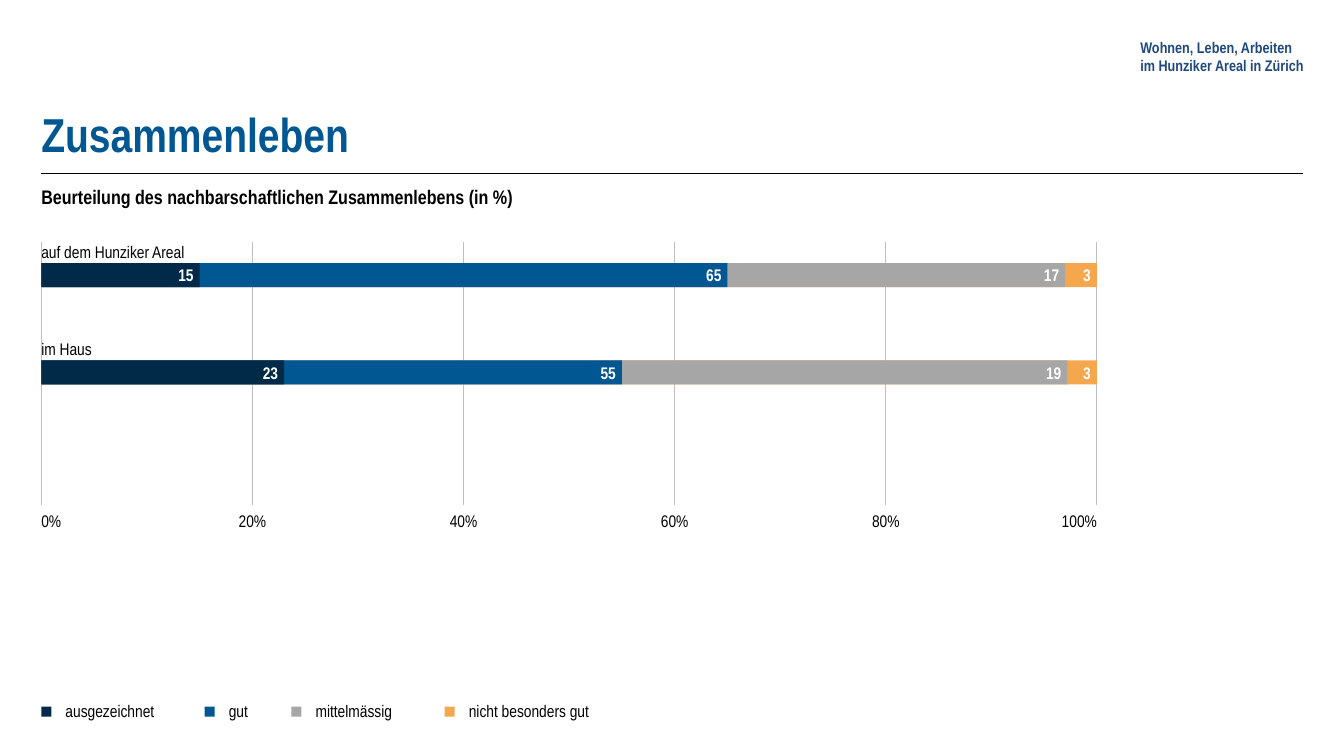
from lxml import etree
from pptx import Presentation, util as u
from pptx.dml.color import RGBColor
from pptx.enum import shapes, text
from pptx.oxml import ns

NAVY = RGBColor(0x00, 0x2A, 0x48)
BLUE = RGBColor(0x00, 0x57, 0x91)
GREY = RGBColor(0xA6, 0xA6, 0xA6)
ORANGE = RGBColor(0xF5, 0xA7, 0x4D)
HEADER_BLUE = RGBColor(0x1F, 0x49, 0x7D)
GRID_GREY = RGBColor(0xBF, 0xBF, 0xBF)
BLACK = RGBColor(0, 0, 0)
WHITE = RGBColor(0xFF, 0xFF, 0xFF)

FONT = "Arial Narrow"
HEADER = ["Wohnen, Leben, Arbeiten", "im Hunziker Areal in Zürich"]
TITLE = "Zusammenleben"
SUBTITLE = "Beurteilung des nachbarschaftlichen Zusammenlebens (in %)"
RATINGS = [
    ("ausgezeichnet", NAVY, 0),
    ("gut", BLUE, 1.62),
    ("mittelmässig", GREY, 2.48),
    ("nicht besonders gut", ORANGE, 4),
]
BARS = [
    ("auf dem Hunziker Areal", [15, 65, 17, 3], [15, 65, 97, 100]),
    ("im Haus", [23, 55, 19, 3], [23, 55, 97.2, 100]),
]
TICKS = range(0, 101, 20)

WIDTH, HEIGHT = 13.33, 7.5
LEFT = 0.41
CONTENT_WIDTH = WIDTH - 2 * LEFT
PLOT_WIDTH = 10.47
PLOT_TOP, PLOT_BOTTOM = 2.4, 5.01
ROW_HEIGHT, BAR_OFFSET, BAR_HEIGHT = 0.965, 0.21, 0.24
TICK_WIDTH = 0.47
LEGEND_TOP, MARKER = 6.95, 0.1

LEFT_ALIGN, CENTER, RIGHT = text.PP_ALIGN.LEFT, text.PP_ALIGN.CENTER, text.PP_ALIGN.RIGHT
TOP, MIDDLE, BOTTOM = text.MSO_ANCHOR.TOP, text.MSO_ANCHOR.MIDDLE, text.MSO_ANCHOR.BOTTOM

deck = Presentation()
deck.slide_width, deck.slide_height = u.Inches(WIDTH), u.Inches(HEIGHT)
page = deck.slides.add_slide(deck.slide_layouts[6])


def inches(*lengths):
    return [u.Inches(length) for length in lengths]


def write(shape, lines, size=12, color=BLACK, bold=False, align=LEFT_ALIGN,
          anchor=TOP, right_inset=0, before=0):
    frame = shape.text_frame
    frame.word_wrap = True
    frame.vertical_anchor = anchor
    frame.margin_left = frame.margin_top = frame.margin_bottom = 0
    frame.margin_right = u.Inches(right_inset)
    para = frame.paragraphs[0]
    para.alignment = align
    para.space_before = u.Pt(before)
    for index, line in enumerate(lines):
        if index:
            para.add_line_break()
        span = para.add_run()
        span.text = line
        span.font.name, span.font.size = FONT, u.Pt(size)
        span.font.bold, span.font.color.rgb = bold, color


def add_text(place, lines, **style):
    write(page.shapes.add_textbox(*inches(*place)), lines, **style)


def add_block(place, color):
    block = page.shapes.add_shape(shapes.MSO_SHAPE.RECTANGLE, *inches(*place))
    block.shadow.inherit = False
    block.fill.solid()
    block.fill.fore_color.rgb = color
    block.line.fill.background()
    return block


def add_rule(ends, color, weight):
    rule = page.shapes.add_connector(shapes.MSO_CONNECTOR.STRAIGHT, *inches(*ends))
    rule.line.color.rgb, rule.line.width = color, u.Pt(weight)
    etree.SubElement(rule._element.spPr, ns.qn("a:effectLst"))


def plot_x(percent):
    return LEFT + PLOT_WIDTH * percent / 100


def add_axis():
    for tick in TICKS:
        x = plot_x(tick)
        add_rule((x, PLOT_TOP, x, PLOT_BOTTOM), GRID_GREY, 0.75)
        share, align = {0: (0, LEFT_ALIGN), 100: (1, RIGHT)}.get(tick, (0.5, CENTER))
        add_text((x - share * TICK_WIDTH, 5.07, TICK_WIDTH, 0.24), [f"{tick}%"], align=align)


def add_bars():
    for row, (label, values, ends) in enumerate(BARS):
        top = PLOT_TOP + row * ROW_HEIGHT
        add_text((LEFT, top, PLOT_WIDTH, 0.27), [label])
        segments = list(zip(RATINGS, values, ends))
        for (_, color, _), value, end in reversed(segments):
            place = (LEFT, top + BAR_OFFSET, plot_x(end) - LEFT, BAR_HEIGHT)
            write(add_block(place, color), [str(value)], color=WHITE, bold=True,
                  align=RIGHT, anchor=MIDDLE, right_inset=0.06)


def add_legend():
    for name, color, offset in RATINGS:
        x = LEFT + offset
        add_block((x, LEGEND_TOP + 0.06, MARKER, MARKER), color)
        add_text((x + 0.24, LEGEND_TOP, 1.36, 0.25), [name])


def main():
    add_text((11.31, 0.35, 1.86, 0.42), HEADER, size=11, color=HEADER_BLUE,
             bold=True, anchor=MIDDLE)
    add_axis()
    add_bars()
    add_legend()
    add_text((LEFT, 1.83, CONTENT_WIDTH, 0.35), [SUBTITLE], size=14, bold=True, before=2.8)
    add_text((LEFT, 0.36, CONTENT_WIDTH, 1.25), [TITLE], size=34, color=BLUE,
             bold=True, anchor=BOTTOM)
    add_rule((LEFT, 1.72, LEFT + CONTENT_WIDTH, 1.72), BLACK, 1)
    deck.save("out.pptx")


if __name__ == "__main__":
    main()
